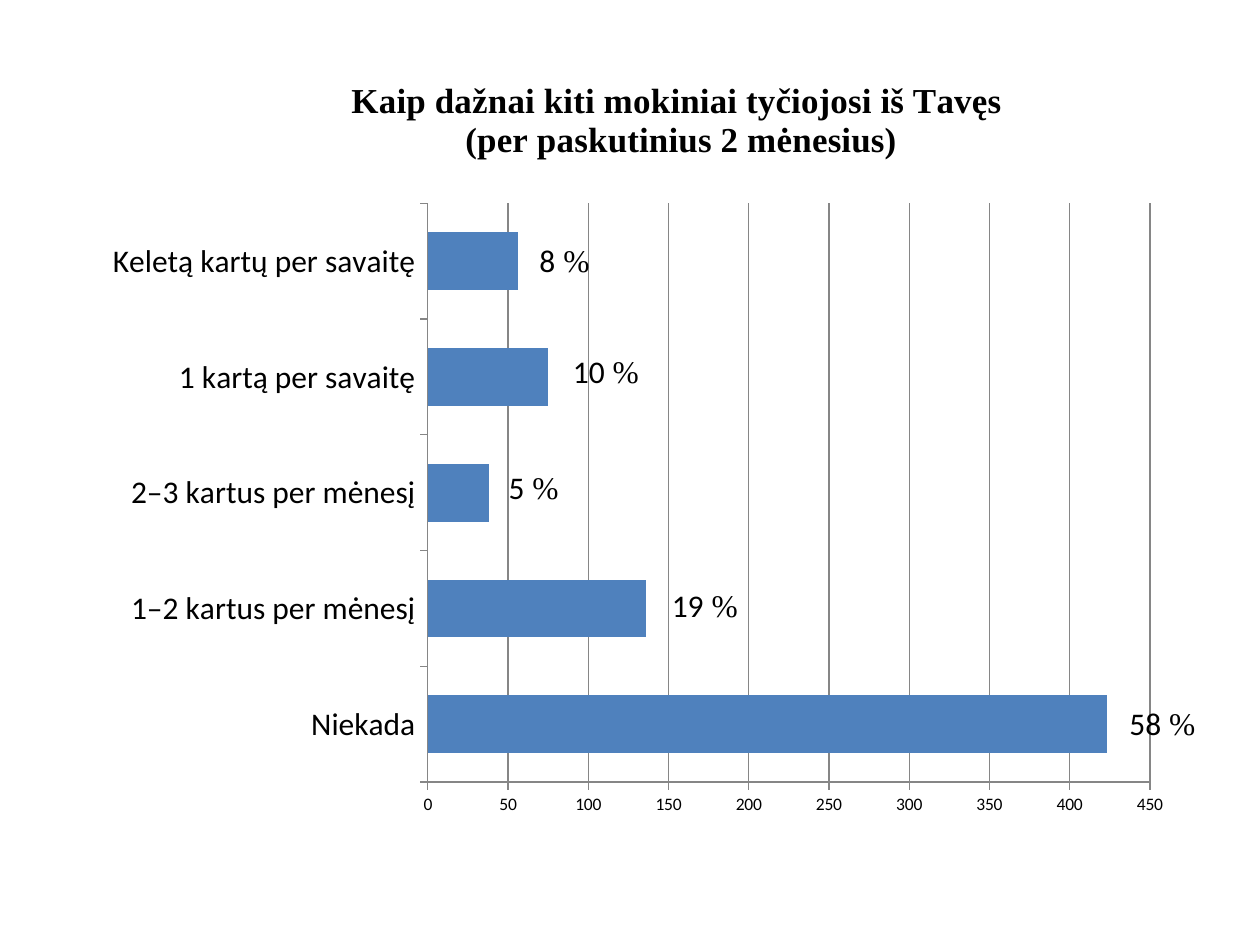
from typing import NamedTuple

from lxml.etree import SubElement
from pptx import Presentation
from pptx.chart.data import CategoryChartData
from pptx.dml.color import RGBColor
from pptx.enum.chart import XL_CHART_TYPE, XL_LABEL_POSITION, XL_TICK_MARK
from pptx.oxml.ns import qn
from pptx.util import Cm, Pt

COLORS = {"text": "000000", "bar": "4F81BD", "line": "868686"}
BODY, SERIF = "Calibri", "Times New Roman"
WIDTH, HEIGHT = Cm(22.2), Cm(15.19)


class Answer(NamedTuple):
    name: str
    count: int
    percent: str
    dx: float
    dy: float


ANSWERS = [
    Answer("Niekada", 423, "58", 0.36, 0),
    Answer("1–2 kartus per mėnesį", 136, "19", 0.42, -0.04),
    Answer("2–3 kartus per mėnesį", 38, "5", 0.3, -0.08),
    Answer("1 kartą per savaitę", 75, "10", 0.4, -0.1),
    Answer("Keletą kartų per savaitę", 56, "8", 0.34, 0),
]
TITLE = ["Kaip dažnai kiti mokiniai tyčiojosi iš Tavęs ",
         "(per paskutinius 2 mėnesius)"]


def rgb(name: str) -> RGBColor:
    return RGBColor.from_string(COLORS[name])


def style_font(font, *, size: float, name: str = BODY, bold: bool = False) -> None:
    font.size, font.name, font.bold = Pt(size), name, bold
    font.color.rgb = rgb("text")


def style_line(line) -> None:
    line.color.rgb = rgb("line")
    line.width = Pt(0.75)


def add_run(p, text: str, **fmt) -> None:
    r = p.add_run()
    r.text = text
    style_font(r.font, **fmt)


def set_layout(parent, index: int, modes: dict[str, str], **lengths) -> None:
    for old in parent.findall(qn("c:layout")):
        parent.remove(old)
    layout = SubElement(parent, qn("c:layout"))
    manual = SubElement(layout, qn("c:manualLayout"))
    sides = {"x": WIDTH, "y": HEIGHT, "w": WIDTH, "h": HEIGHT}
    shares = {tag: str(cm / sides[tag]) for tag, cm in lengths.items()}
    for tag, value in (modes | shares).items():
        SubElement(manual, qn(f"c:{tag}")).set("val", value)
    parent.insert(index, layout)


def style_axis(axis, size: float) -> None:
    axis.major_tick_mark = XL_TICK_MARK.OUTSIDE
    axis.minor_tick_mark = XL_TICK_MARK.NONE
    style_line(axis.format.line)
    style_font(axis.tick_labels.font, size=size)


def add_title(chart) -> None:
    chart.has_title = True
    tf = chart.chart_title.text_frame
    for i, line in enumerate(TITLE):
        p = tf.add_paragraph() if i else tf.paragraphs[0]
        add_run(p, line, size=20, name=SERIF, bold=True)
    set_layout(chart.chart_title.element, 1, {"xMode": "edge", "yMode": "edge"},
               x=Cm(5.11), y=Cm(0))


def add_labels(chart) -> None:
    series = chart.plots[0].series[0]
    series.data_labels.show_value = True
    style_font(series.data_labels.font, size=18)
    for i, answer in enumerate(ANSWERS):
        label = series.points[i].data_label
        p = label.text_frame.paragraphs[0]
        add_run(p, answer.percent, size=18)
        add_run(p, " %", size=18, name=SERIF)
        label.position = XL_LABEL_POSITION.OUTSIDE_END
    for answer, node in zip(ANSWERS, chart.element.iter(qn("c:dLbl"))):
        set_layout(node, 1, {}, x=Cm(answer.dx), y=Cm(answer.dy))
    for leader in chart.element.iter(qn("c:showLeaderLines")):
        leader.set("val", "0")


def add_answer_chart(s) -> None:
    data = CategoryChartData()
    data.categories = [a.name for a in ANSWERS]
    data.add_series("Series 1", [a.count for a in ANSWERS])
    chart = s.shapes.add_chart(XL_CHART_TYPE.BAR_CLUSTERED, Cm(1.9), Cm(1.52),
                               WIDTH, HEIGHT, data).chart
    style_font(chart.font, size=10)
    chart.has_legend = False
    plot = chart.plots[0]
    plot.gap_width = 100
    plot.vary_by_categories = False
    fill = plot.series[0].format.fill
    fill.solid()
    fill.fore_color.rgb = rgb("bar")
    style_axis(chart.category_axis, 18)
    axis = chart.value_axis
    style_axis(axis, 10)
    axis.minimum_scale, axis.maximum_scale, axis.major_unit = 0, 450, 50
    axis.has_major_gridlines = True
    style_line(axis.major_gridlines.format.line)
    add_title(chart)
    add_labels(chart)
    set_layout(next(chart.element.iter(qn("c:plotArea"))), 0,
               {"layoutTarget": "inner", "xMode": "edge", "yMode": "edge"},
               x=Cm(6.73), y=Cm(2.58), w=Cm(14.57), h=Cm(11.67))


def main() -> None:
    prs = Presentation()
    prs.slide_width, prs.slide_height = Cm(25.4), Cm(19.05)
    s = prs.slides.add_slide(prs.slide_layouts[6])
    add_answer_chart(s)
    prs.save("out.pptx")


if __name__ == "__main__":
    main()
